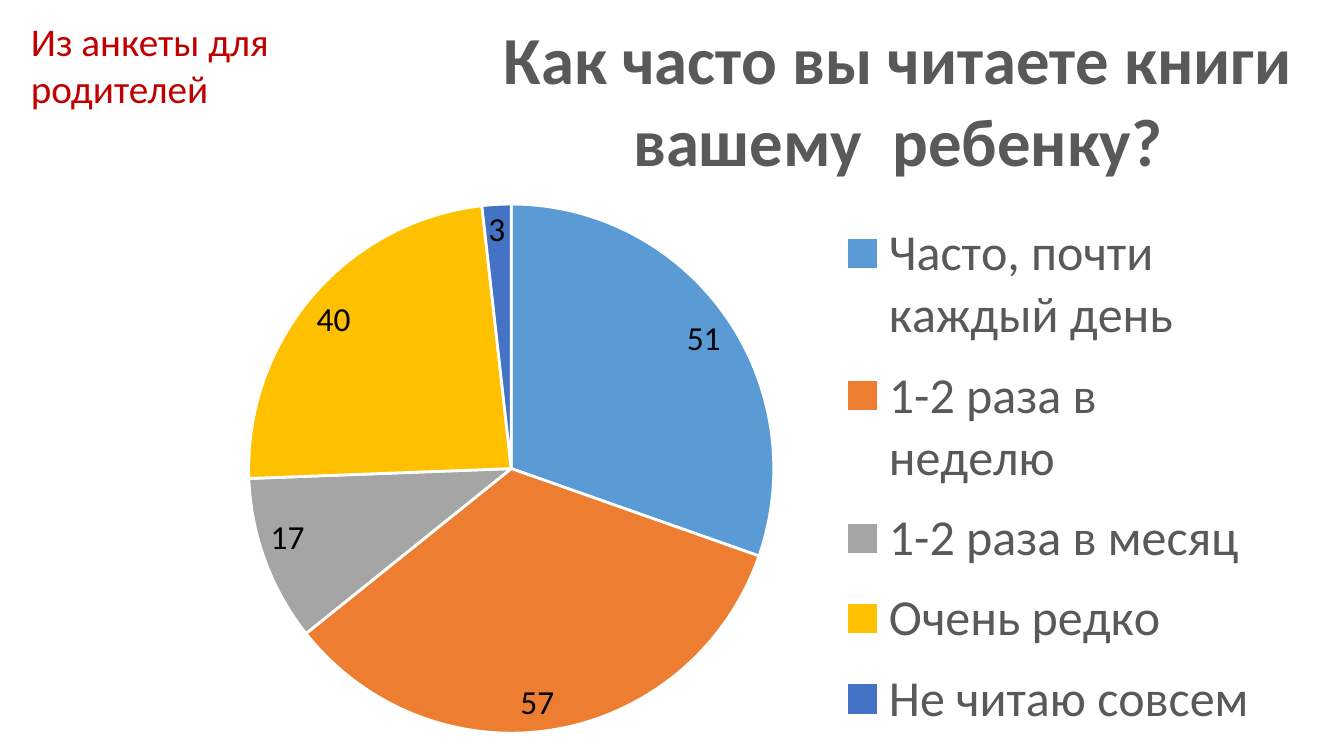
from dataclasses import dataclass

from pptx import Presentation
from pptx.chart.data import CategoryChartData
from pptx.dml.color import RGBColor
from pptx.enum import chart as chart_enum
from pptx.oxml import parse_xml
from pptx.oxml.ns import nsdecls, qn
from pptx.util import Cm, Pt

FONT = "Calibri"
GREY = "595959"
BLACK = "000000"
WHITE = "FFFFFF"
RED = "C00000"


@dataclass(frozen=True)
class Answer:
    label: str
    count: int
    color: str


@dataclass(frozen=True)
class Area:
    """Place within the chart, as fractions of its width and height."""
    x: float
    y: float
    width: float | None = None
    height: float | None = None


ANSWERS = [
    Answer("Часто, почти каждый день", 51, "5B9BD5"),
    Answer("1-2 раза в неделю", 57, "ED7D31"),
    Answer("1-2 раза в месяц", 17, "A5A5A5"),
    Answer("Очень редко", 40, "FFC000"),
    Answer("Не читаю совсем", 3, "4472C4"),
]
TITLE_AREA = Area(0.38, 0)
PIE_AREA = Area(0.08, 0.27, 0.63, 0.7)
LEGEND_AREA = Area(0.65, 0.27, 0.32, 0.72)


def rgb(color: str) -> RGBColor:
    return RGBColor.from_string(color)


def format_font(font, size: int, color: str, bold: bool = False) -> None:
    font.name = FONT
    font.size = Pt(size)
    font.bold = bold
    font.color.rgb = rgb(color)


def set_layout(element, area: Area, inner: bool = False) -> None:
    """Give a chart part a manual layout."""
    for old_layout in element.findall(qn("c:layout")):
        element.remove(old_layout)
    values = [("x", area.x), ("y", area.y), ("w", area.width), ("h", area.height)]
    target = '<c:layoutTarget val="inner"/>' if inner else ""
    modes = '<c:xMode val="edge"/><c:yMode val="edge"/>'
    sizes = "".join(f'<c:{name} val="{value}"/>' for name, value in values if value is not None)
    layout = parse_xml(
        f'<c:layout {nsdecls("c")}><c:manualLayout>{target}{modes}{sizes}</c:manualLayout></c:layout>'
    )
    overlay = element.find(qn("c:overlay"))
    if overlay is None:
        element.insert(0, layout)
    else:
        overlay.addprevious(layout)


def add_title(chart) -> None:
    chart.has_title = True
    title = chart.chart_title
    run = title.text_frame.paragraphs[0].add_run()
    run.text = "Как часто вы читаете книги вашему  ребенку?"
    format_font(run.font, 48, GREY, bold=True)
    title.include_in_layout = False
    set_layout(title._element, TITLE_AREA)


def add_legend(chart) -> None:
    chart.has_legend = True
    legend = chart.legend
    legend.position = chart_enum.XL_LEGEND_POSITION.BOTTOM
    legend.include_in_layout = False
    format_font(legend.font, 36, GREY)
    set_layout(legend._element, LEGEND_AREA)


def format_pie(plot) -> None:
    plot.vary_by_categories = True
    for index, answer in enumerate(ANSWERS):
        point_format = plot.series[0].points[index].format
        point_format.fill.solid()
        point_format.fill.fore_color.rgb = rgb(answer.color)
        point_format.line.color.rgb = rgb(WHITE)
        point_format.line.width = Pt(2)
    labels = plot.series[0].data_labels
    labels.show_value = True
    labels.position = chart_enum.XL_LABEL_POSITION.INSIDE_END
    format_font(labels.font, 24, BLACK)


def add_answer_chart(slide) -> None:
    data = CategoryChartData()
    data.categories = [answer.label for answer in ANSWERS]
    data.add_series("Ответы", [answer.count for answer in ANSWERS])
    chart = slide.shapes.add_chart(
        chart_enum.XL_CHART_TYPE.PIE, Cm(0), Cm(0), Cm(32.87), Cm(19.05), data
    ).chart
    format_font(chart.font, 10, BLACK)
    add_title(chart)
    add_legend(chart)
    format_pie(chart.plots[0])
    set_layout(chart._chartSpace.chart.plotArea, PIE_AREA, inner=True)


def add_source_note(slide) -> None:
    frame = slide.shapes.add_textbox(Cm(0.53), Cm(0.3), Cm(10.34), Cm(2.64)).text_frame
    frame.word_wrap = True
    run = frame.paragraphs[0].add_run()
    run.text = "Из анкеты для родителей"
    format_font(run.font, 28, RED)


def main() -> None:
    presentation = Presentation()
    presentation.slide_width = Cm(33.87)
    presentation.slide_height = Cm(19.05)
    slide = presentation.slides.add_slide(presentation.slide_layouts[6])
    add_answer_chart(slide)
    add_source_note(slide)
    presentation.save("out.pptx")


if __name__ == "__main__":
    main()
